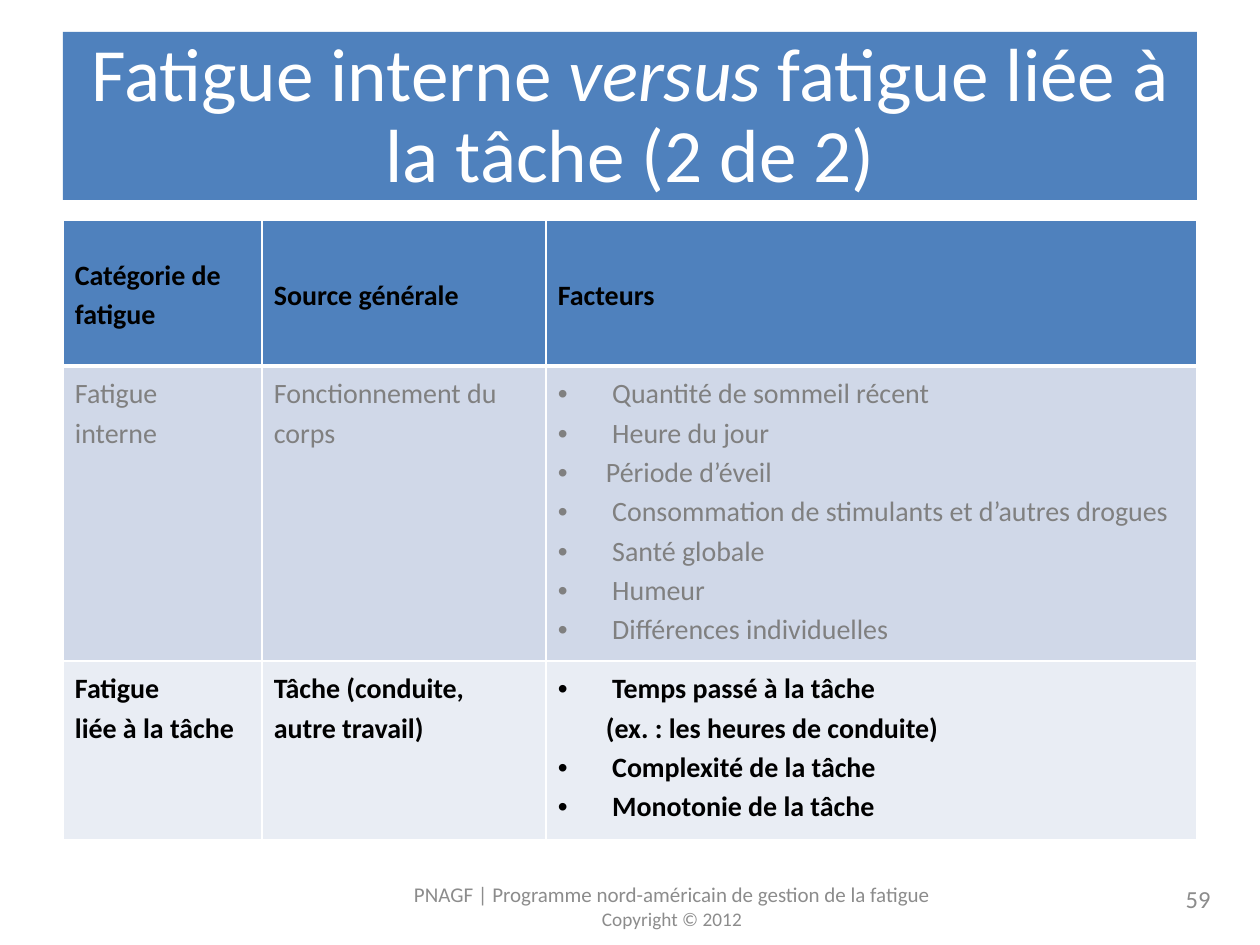
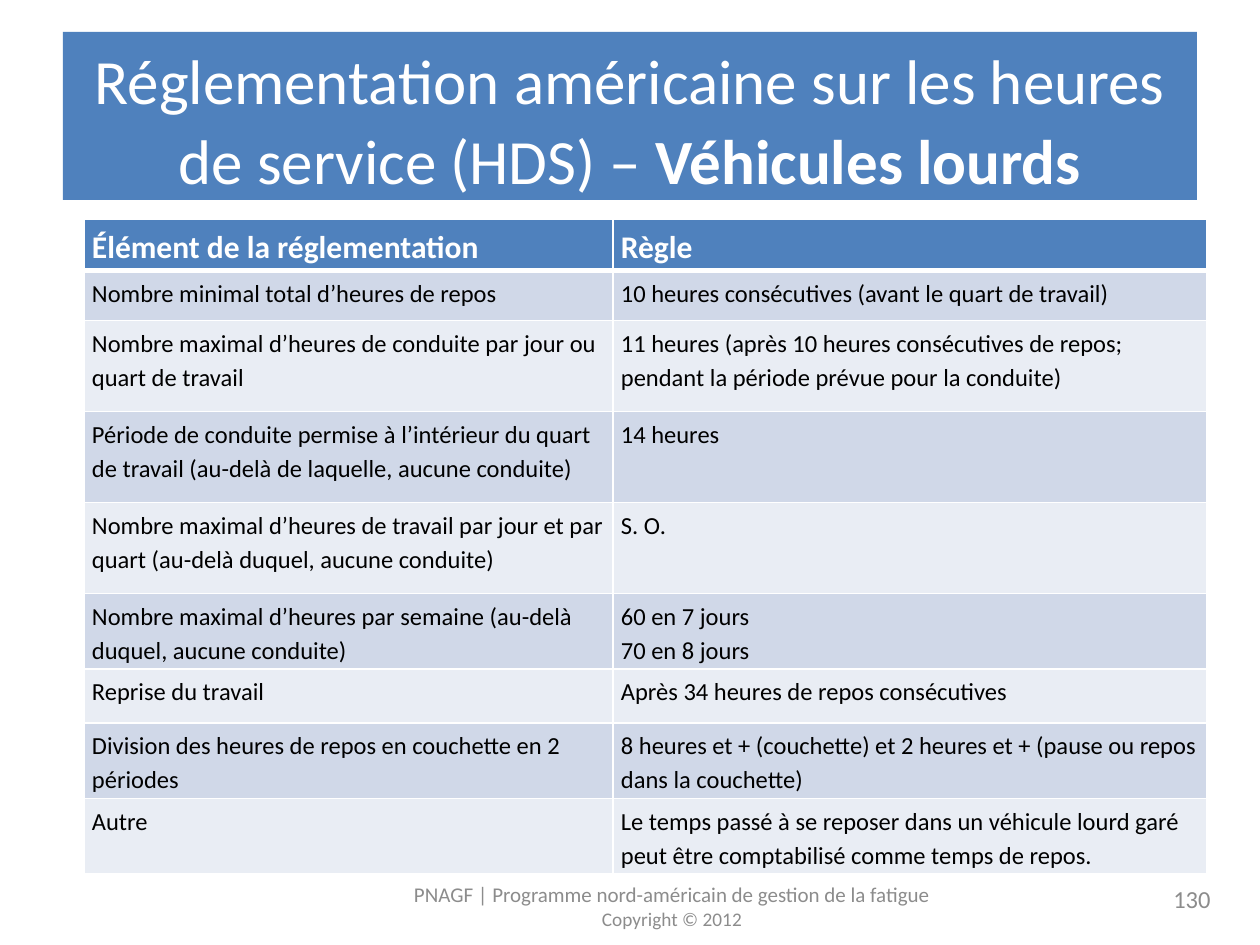
import pptx
import pptx.dml.color
import pptx.enum.shapes
import pptx.enum.text
import pptx.oxml.ns
import pptx.util
from dataclasses import dataclass
from lxml import etree

PX_PER_INCH = 126
ALIGN = pptx.enum.text.PP_ALIGN
ANCHOR = pptx.enum.text.MSO_ANCHOR


@dataclass(frozen=True)
class Theme:
    font: str = "Calibri"
    blue: str = "4F81BD"
    band_dark: str = "D0D8E8"
    band_light: str = "E9EDF4"
    white: str = "FFFFFF"
    black: str = "000000"
    muted: str = "808080"
    footer: str = "8C8C8C"
    title_leading: float = 45.8
    cell_leading: float = 1.15
    footer_size: int = 12
    copyright_size: int = 11
    number_size: int = 14
    thin: int = 1
    thick: int = 3


THEME = Theme()

FATIGUE_ROWS = [
    [["Catégorie de fatigue"], ["Source générale"], ["Facteurs"]],
    [["Fatigue", "interne"], ["Fonctionnement du corps"],
     [" Quantité de sommeil récent", " Heure du jour", "Période d’éveil",
      " Consommation de stimulants et d’autres drogues", " Santé globale",
      " Humeur", " Différences individuelles"]],
    [["Fatigue", "liée à la tâche"], ["Tâche (conduite,", "autre travail)"],
     [" Temps passé à la tâche\v(ex. : les heures de conduite)",
      " Complexité de la tâche", " Monotonie de la tâche"]],
]

HOURS_ROWS = [
    [["Élément de la réglementation"], ["Règle"]],
    [["Nombre minimal total d’heures de repos"],
     ["10 heures consécutives (avant le quart de travail)"]],
    [["Nombre maximal d’heures de conduite par jour ou quart de travail"],
     ["11 heures (après 10 heures consécutives de repos; pendant la période "
      "prévue pour la conduite)"]],
    [["Période de conduite permise à l’intérieur du quart de travail "
      "(au-delà de laquelle, aucune conduite)"], ["14 heures"]],
    [["Nombre maximal d’heures de travail par jour et par quart "
      "(au-delà duquel, aucune conduite)"], ["S. O."]],
    [["Nombre maximal d’heures par semaine (au-delà duquel, aucune conduite)"],
     ["60 en 7 jours", "70 en 8 jours"]],
    [["Reprise du travail"], ["Après 34 heures de repos consécutives"]],
    [["Division des heures de repos en couchette en 2 périodes"],
     ["8 heures et + (couchette) et 2 heures et + (pause ou repos dans la couchette)"]],
    [["Autre"],
     ["Le temps passé à se reposer dans un véhicule lourd garé peut être "
      "comptabilisé comme temps de repos."]],
]


def px(n):
    return pptx.util.Emu(round(n * 914400 / PX_PER_INCH))


def rgb(color):
    return pptx.dml.color.RGBColor.from_string(color)


def style_font(p, size, color, bold=False):
    p.font.name = THEME.font
    p.font.size = pptx.util.Pt(size)
    p.font.bold = bold
    p.font.color.rgb = rgb(color)


def add_child(parent, tag, **attrs):
    child = etree.SubElement(parent, pptx.oxml.ns.qn(tag))
    for name, value in attrs.items():
        child.set(name, str(value))
    return child


def add_text_box(slide, x, y, w, h, margin_y=6):
    tf = slide.shapes.add_textbox(px(x), px(y), px(w), px(h)).text_frame
    tf.word_wrap = True
    tf.vertical_anchor = ANCHOR.MIDDLE
    tf.margin_top = tf.margin_bottom = px(margin_y)
    return tf


def add_title(slide, runs, size):
    """Draw the band and its title; runs are (text, style) with style '', 'bold' or 'italic'."""
    band = slide.shapes.add_shape(pptx.enum.shapes.MSO_SHAPE.RECTANGLE,
                                  px(63), px(32), px(1134), px(168))
    band.shadow.inherit = False
    band.fill.solid()
    band.fill.fore_color.rgb = rgb(THEME.blue)
    band.line.fill.background()
    p = add_text_box(slide, 63, 38, 1134, 158).paragraphs[0]
    p.alignment = ALIGN.CENTER
    p.line_spacing = pptx.util.Pt(THEME.title_leading)
    style_font(p, size, THEME.white)
    for text, style in runs:
        r = p.add_run()
        r.text = text
        if style:
            setattr(r.font, style, True)


def add_footer(slide, number):
    tf = add_text_box(slide, 378, 882, 588, 48, margin_y=0)
    lines = [("PNAGF | Programme nord-américain de gestion de la fatigue", THEME.footer_size),
             ("Copyright © 2012", THEME.copyright_size)]
    for i, (text, size) in enumerate(lines):
        p = tf.add_paragraph() if i else tf.paragraphs[0]
        p.text = text
        p.alignment = ALIGN.CENTER
        style_font(p, size, THEME.footer)
    p = add_text_box(slide, 929, 874, 294, 50).paragraphs[0]
    p.text = str(number)
    p.alignment = ALIGN.RIGHT
    style_font(p, THEME.number_size, THEME.footer)


def set_borders(cell, top, bottom):
    tcPr = cell._tc.get_or_add_tcPr()
    for side, width in zip("LRTB", (THEME.thin, THEME.thin, top, bottom)):
        ln = add_child(tcPr, f"a:ln{side}", w=pptx.util.Pt(width))
        add_child(add_child(ln, "a:solidFill"), "a:srgbClr", val=THEME.white)


def add_bullet(p):
    pPr = p._p.get_or_add_pPr()
    pPr.set("marL", str(px(48)))
    pPr.set("indent", str(-px(48)))
    add_child(pPr, "a:buFont", typeface="Arial")
    add_child(pPr, "a:buChar", char="•")
    add_child(add_child(pPr, "a:tabLst"), "a:tab", pos=px(63), algn="l")


def fill_cell(cell, lines, size, color, bold, bulleted):
    tf = cell.text_frame
    for i, line in enumerate(lines):
        p = tf.add_paragraph() if i else tf.paragraphs[0]
        p.text = line
        p.line_spacing = THEME.cell_leading
        if bulleted:
            add_bullet(p)
        style_font(p, size, color, bold)


def add_banded_table(slide, x, y, widths, heights, rows, margins, row_styles,
                     header_anchor=ANCHOR.TOP, bullet_column=None):
    """row_styles holds one (size, color, bold) for each row."""
    frame = slide.shapes.add_table(len(rows), len(widths), px(x), px(y),
                                   px(sum(widths)), px(sum(heights)))
    table = frame.table
    table.first_row = table.horz_banding = False
    for column, width in zip(table.columns, widths):
        column.width = px(width)
    for i, (lines_by_column, height, style) in enumerate(zip(rows, heights, row_styles)):
        table.rows[i].height = px(height)
        band = THEME.band_dark if i % 2 else THEME.band_light
        for j, lines in enumerate(lines_by_column):
            cell = table.cell(i, j)
            cell.margin_left = cell.margin_right = px(margins[0])
            cell.margin_top = cell.margin_bottom = px(margins[1])
            cell.vertical_anchor = ANCHOR.TOP if i else header_anchor
            set_borders(cell, top=THEME.thick if i == 1 else THEME.thin,
                        bottom=THEME.thin if i else THEME.thick)
            cell.fill.solid()
            cell.fill.fore_color.rgb = rgb(band if i else THEME.blue)
            fill_cell(cell, lines, *style, bulleted=i > 0 and j == bullet_column)


def add_slide(prs, title_runs, title_size, number):
    slide = prs.slides.add_slide(prs.slide_layouts[6])
    add_title(slide, title_runs, title_size)
    add_footer(slide, number)
    return slide


def main():
    prs = pptx.Presentation()
    prs.slide_width, prs.slide_height = px(1260), px(945)

    slide = add_slide(prs, [("Fatigue interne ", ""), ("versus", "italic"),
                            (" fatigue liée à la tâche (2 de 2)", "")], 43, 59)
    emphasis = (16, THEME.black, True)
    add_banded_table(slide, 63, 220, [199, 284, 651], [146, 295, 179], FATIGUE_ROWS,
                     margins=(12, 6),
                     row_styles=[emphasis, (16, THEME.muted, False), emphasis],
                     header_anchor=ANCHOR.MIDDLE, bullet_column=2)

    slide = add_slide(prs, [("Réglementation américaine sur les heures de service (HDS) – ", ""),
                            ("Véhicules lourds", "bold")], 36, 130)
    body = (14, THEME.black, False)
    add_banded_table(slide, 84, 219, [529, 594], [49, 50, 91, 91, 91, 73, 54, 73, 74],
                     HOURS_ROWS, margins=(8, 4),
                     row_styles=[(18, THEME.white, True)] + [body] * (len(HOURS_ROWS) - 1))

    prs.save("out.pptx")


if __name__ == "__main__":
    main()
